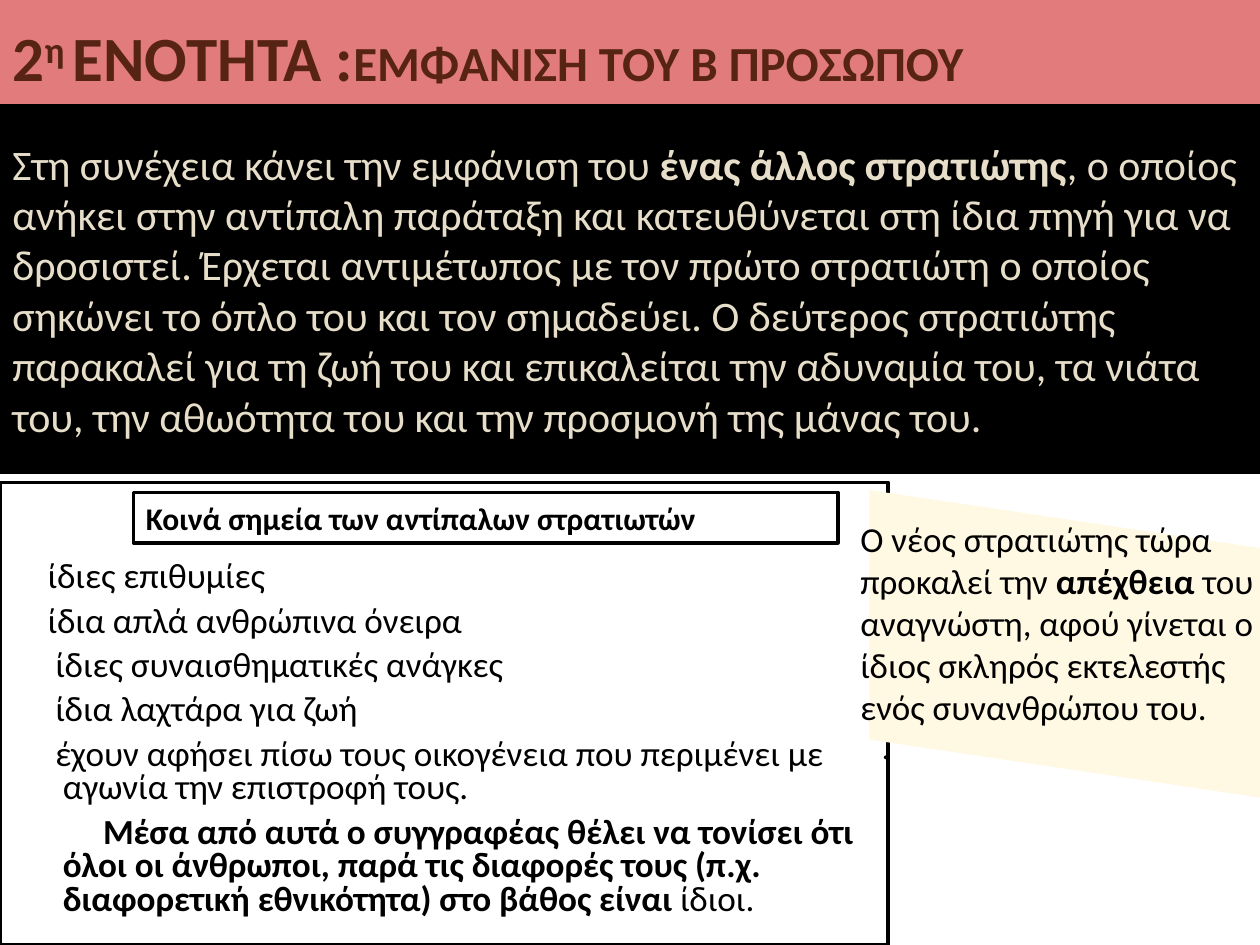
from pptx import Presentation
from pptx import util as u
from pptx.dml import color
from pptx.enum import shapes, text

INK = "000000"
SAND = "E7DEC9"
BROWN = "572314"
BOLD = {"bold": True}


def rgb(code):
    return color.RGBColor.from_string(code)


def assign(item, values):
    for name, value in values.items():
        setattr(item, name, value)


def place(shape, left, top, wide, high):
    spot = {"left": left, "top": top, "width": wide, "height": high}
    assign(shape, {name: u.Inches(size) for name, size in spot.items()})


def paint(shape, fill, line=None):
    shape.fill.solid()
    shape.fill.fore_color.rgb = rgb(fill)
    if line:
        shape.line.color.rgb = rgb(line)
        shape.line.width = u.Pt(2)
    else:
        shape.line.fill.background()


def frame(shape, anchor=text.MSO_ANCHOR.TOP, inset=0.05):
    body = shape.text_frame
    assign(body, {"word_wrap": True, "auto_size": text.MSO_AUTO_SIZE.NONE,
                  "vertical_anchor": anchor, "margin_top": u.Inches(inset)})
    return body


def write(para, runs, size, ink=INK):
    para.alignment = text.PP_ALIGN.LEFT
    for words, extra in runs:
        run = para.add_run()
        run.text = words
        style = {"name": "Calibri", "size": u.Pt(size), "bold": False}
        assign(run.font, {**style, **extra})
        run.font.color.rgb = rgb(ink)


def add_box(slide, spot, fill, kind=shapes.MSO_SHAPE.RECTANGLE):
    box = slide.shapes.add_shape(kind, *map(u.Inches, spot))
    box.shadow.inherit = False
    paint(box, fill, INK)
    return box


def add_title(slide):
    title = slide.shapes.title
    place(title, 0, 0, 10, 0.9)
    paint(title, "E17B7C")
    para = frame(title, text.MSO_ANCHOR.MIDDLE).paragraphs[0]
    write(para, [("2", BOLD), ("η ", BOLD), ("ΕΝΟΤΗΤΑ :", BOLD),
                 ("ΕΜΦΑΝΙΣΗ ΤΟΥ Β ΠΡΟΣΩΠΟΥ", {"bold": True, "size": u.Pt(28)})],
          36, BROWN)
    para.runs[1]._r.get_or_add_rPr().set("baseline", "30000")


def add_list(slide):
    box = add_box(slide, (0, 3.83, 7.05, 3.67), "FFFFFF")
    body = frame(box, inset=0.63)
    items = [
        (-0.12, [("ίδιες επιθυμίες", {})]),
        (-0.12, [("ίδια απλά ανθρώπινα όνειρα", {})]),
        (-0.06, [("ίδιες συναισθηματικές ανάγκες", {})]),
        (-0.06, [("ίδια λαχτάρα για ζωή", {})]),
        (-0.06, [("έχουν αφήσει πίσω τους οικογένεια που περιμένει με "
                  "αγωνία την επιστροφή τους.", {})]),
        (0.32, [("Μέσα από αυτά ο συγγραφέας θέλει να τονίσει ότι όλοι οι "
                 "άνθρωποι, παρά τις διαφορές τους (π.χ. διαφορετική "
                 "εθνικότητα) στο βάθος είναι ", BOLD), ("ίδιοι.", {})]),
    ]
    for row, (shift, runs) in enumerate(items):
        para = body.add_paragraph() if row else body.paragraphs[0]
        props = para._p.get_or_add_pPr()
        props.set("marL", str(u.Inches(0.4)))
        props.set("indent", str(u.Inches(shift)))
        assign(para, {"line_spacing": 0.8, "space_before": u.Pt(6 if row else 0)})
        write(para, runs, 20.1)


def add_story(slide):
    box = add_box(slide, (0, 0.84, 10, 2.91), INK,
                  shapes.MSO_SHAPE.FLOWCHART_PROCESS)
    body = frame(box, text.MSO_ANCHOR.MIDDLE)
    write(body.paragraphs[0], [
        ("Στη συνέχεια κάνει την εμφάνιση του ", {}),
        ("ένας άλλος στρατιώτης", BOLD),
        (", ο οποίος ανήκει στην αντίπαλη παράταξη και κατευθύνεται στη ίδια "
         "πηγή για να δροσιστεί. Έρχεται αντιμέτωπος με τον πρώτο στρατιώτη ο "
         "οποίος σηκώνει το όπλο του και τον σημαδεύει. Ο δεύτερος στρατιώτης "
         "παρακαλεί για τη ζωή του και επικαλείται την αδυναμία του, τα νιάτα "
         "του, την αθωότητα του και την προσμονή της μάνας του.", {}),
    ], 24, SAND)


def add_label(slide):
    box = add_box(slide, (1.06, 3.91, 5.59, 0.4), "FFFFFF")
    write(frame(box).paragraphs[0],
          [("Κοινά σημεία των αντίπαλων στρατιωτών", BOLD)], 18)


def add_note(slide):
    left, top, right, drop, high = 6.9, 3.89, 10, 0.46, 1.98
    pen = slide.shapes.build_freeform(u.Inches(left), u.Inches(top))
    ends = [(right, top + drop), (right, top + drop + high), (left, top + high)]
    pen.add_line_segments([(u.Inches(x), u.Inches(y)) for x, y in ends])
    panel = pen.convert_to_shape()
    panel.shadow.inherit = False
    paint(panel, "FFF8E3")

    spot = (6.73, 4.06, 3.46, 2.09)
    body = frame(slide.shapes.add_textbox(*map(u.Inches, spot)))
    write(body.paragraphs[0], [
        ("Ο νέος στρατιώτης τώρα προκαλεί την ", {}),
        ("απέχθεια ", BOLD),
        ("του αναγνώστη, αφού γίνεται ο ίδιος σκληρός εκτελεστής ενός "
         "συνανθρώπου του.", {}),
    ], 20)
    last = body.add_paragraph()
    last._p.get_or_add_pPr().set("marL", str(u.Inches(0.17)))
    write(last, [(".", {})], 18)


def main():
    deck = Presentation()
    assign(deck, {"slide_width": u.Inches(10), "slide_height": u.Inches(7.5)})
    slide = deck.slides.add_slide(deck.slide_layouts[5])
    for build in (add_title, add_list, add_story, add_label, add_note):
        build(slide)
    deck.save("out.pptx")


if __name__ == "__main__":
    main()
